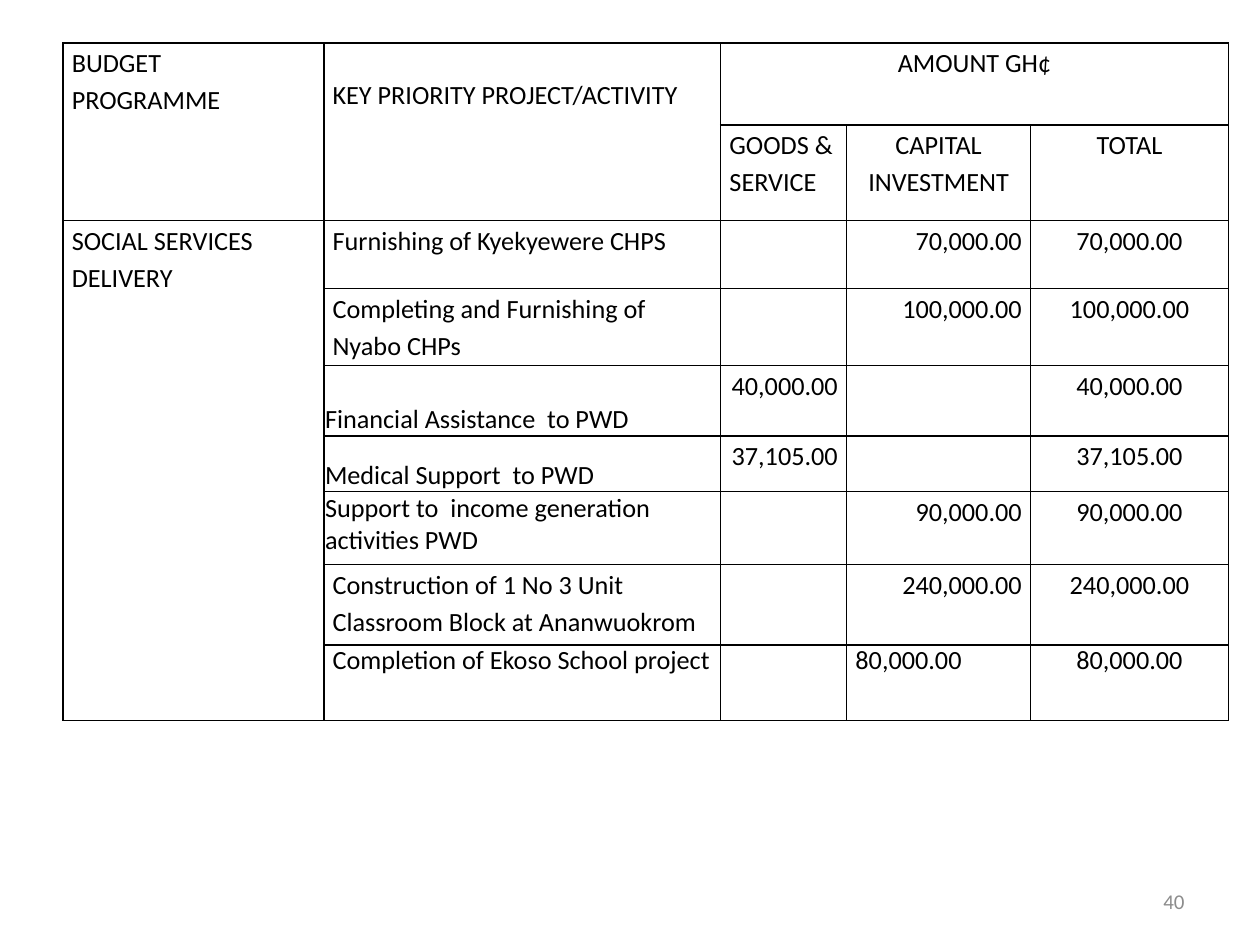
from lxml.etree import SubElement
from pptx import Presentation
from pptx.dml.color import RGBColor
from pptx.enum.text import MSO_ANCHOR, PP_ALIGN
from pptx.oxml.ns import qn
from pptx.util import Inches, Pt

BLACK = RGBColor(0x00, 0x00, 0x00)
GRAY = RGBColor(0x8C, 0x8C, 0x8C)
FONT = "Calibri"
LEFT, CENTER, RIGHT = PP_ALIGN.LEFT, PP_ALIGN.CENTER, PP_ALIGN.RIGHT

COLUMNS = [2.07, 3.15, 1, 1.46, 1.57]
ROWS = [0.65, 0.76, 0.54, 0.61, 0.56, 0.44, 0.58, 0.64, 0.6]
HEADER_ROWS = 2
ALIGNMENTS = [LEFT, LEFT, RIGHT, RIGHT, CENTER]

BUDGET = [
    ["BUDGET PROGRAMME", "KEY PRIORITY PROJECT/ACTIVITY", "AMOUNT GH¢", "", ""],
    ["", "", "GOODS & SERVICE", "CAPITAL INVESTMENT", "TOTAL"],
    ["SOCIAL SERVICES DELIVERY", "Furnishing of Kyekyewere CHPS", "", "70,000.00", "70,000.00"],
    ["", "Completing and Furnishing of Nyabo CHPs", "", "100,000.00", "100,000.00"],
    ["", "Financial Assistance  to PWD", "40,000.00", "", "40,000.00"],
    ["", "Medical Support  to PWD", "37,105.00", "", "37,105.00"],
    ["", "Support to  income generation activities PWD", "", "90,000.00", "90,000.00"],
    ["", "Construction of 1 No 3 Unit Classroom Block at Ananwuokrom", "", "240,000.00", "240,000.00"],
    ["", "Completion of Ekoso School project", "", "80,000.00", "80,000.00"],
]


def style_text(paragraph, size, color, alignment):
    paragraph.font.name = FONT
    paragraph.font.size = Pt(size)
    paragraph.font.color.rgb = color
    paragraph.alignment = alignment


def add_borders(cell):
    properties = cell._tc.get_or_add_tcPr()
    for side in ("a:lnL", "a:lnR", "a:lnT", "a:lnB"):
        line = SubElement(properties, qn(side), w=str(Pt(1)))
        fill = SubElement(line, qn("a:solidFill"))
        SubElement(fill, qn("a:srgbClr"), val=str(BLACK))


prs = Presentation()
prs.slide_width, prs.slide_height = Inches(10), Inches(7.5)
slide = prs.slides.add_slide(prs.slide_layouts[6])

# Budget table grid
budget = slide.shapes.add_table(
    len(ROWS), len(COLUMNS), Inches(0.5), Inches(0.34),
    Inches(sum(COLUMNS)), Inches(sum(ROWS))).table
budget.first_row = budget.horz_banding = False
for column, width in zip(budget.columns, COLUMNS):
    column.width = Inches(width)
for row, height in zip(budget.rows, ROWS):
    row.height = Inches(height)

# Cell text and borders
for r, entries in enumerate(BUDGET):
    for c, entry in enumerate(entries):
        cell = budget.cell(r, c)
        cell.margin_left = cell.margin_right = Inches(0.07)
        cell.margin_top = cell.margin_bottom = 0
        add_borders(cell)
        cell.fill.background()
        cell.text = entry
        paragraph = cell.text_frame.paragraphs[0]
        alignment = ALIGNMENTS[c]
        if r < HEADER_ROWS:
            alignment = CENTER if "GOODS" not in entry and c >= 2 else LEFT
        style_text(paragraph, 15, BLACK, alignment)
        if r < len(ROWS) - 1:
            paragraph.line_spacing = 1.15

# Activities for PWD sit tight against the cell edge
for r in (4, 5, 6):
    activity = budget.cell(r, 1)
    activity.margin_left = activity.margin_right = activity.margin_top = Inches(0.01)
    activity.text_frame.paragraphs[0].line_spacing = 1
    if r < 6:
        activity.vertical_anchor = MSO_ANCHOR.BOTTOM

# Exceptions: lowered activity heading, left-set last investment
budget.cell(0, 1).margin_top = Inches(0.25)
budget.cell(8, 3).text_frame.paragraphs[0].alignment = LEFT

# Merged headings and programme
for first, last in [((0, 0), (1, 0)), ((0, 1), (1, 1)), ((0, 2), (0, 4)), ((2, 0), (8, 0))]:
    budget.cell(*first).merge(budget.cell(*last))

# Page number
page_number = slide.shapes.add_textbox(
    Inches(7.17), Inches(6.95), Inches(2.33), Inches(0.4)).text_frame
page_number.word_wrap = True
page_number.vertical_anchor = MSO_ANCHOR.MIDDLE
page_number.text = "40"
style_text(page_number.paragraphs[0], 12, GRAY, RIGHT)

prs.save("out.pptx")
